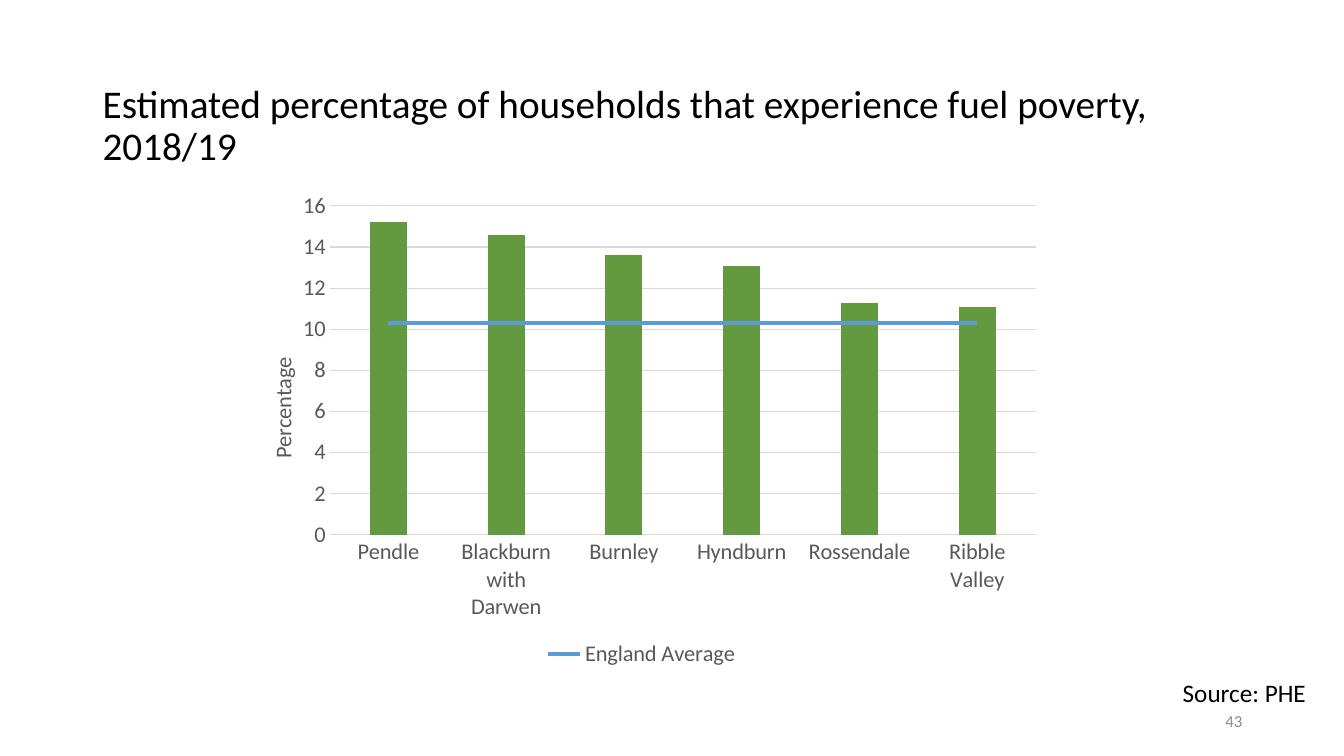
"""Build a slide charting fuel poverty by district against the England average."""
from lxml import etree
from pptx import Presentation
from pptx.chart.data import CategoryChartData
from pptx.dml.color import RGBColor
from pptx.enum import chart as ch, text
from pptx.oxml import parse_xml
from pptx.oxml.ns import nsdecls, qn
from pptx.util import Inches, Pt

BLACK = RGBColor(0x00, 0x00, 0x00)
NUMBER_GREY = RGBColor(0x8C, 0x8C, 0x8C)
LABEL_GREY = RGBColor(0x59, 0x59, 0x59)
GRID_GREY = RGBColor(0xD9, 0xD9, 0xD9)
GREEN = RGBColor(0x63, 0x9A, 0x3F)
BLUE = RGBColor(0x5B, 0x9B, 0xD5)
FONT = "Calibri"
LEFT, RIGHT = text.PP_ALIGN.LEFT, text.PP_ALIGN.RIGHT
TOP, MIDDLE = text.MSO_ANCHOR.TOP, text.MSO_ANCHOR.MIDDLE


def style_font(font, size, color):
    font.name, font.size, font.bold = FONT, Pt(size), False
    font.color.rgb = color


def set_layout(parent, index, **fractions):
    for old in parent.findall(qn("c:layout")):
        parent.remove(old)
    layout = etree.Element(qn("c:layout"))
    manual = etree.SubElement(layout, qn("c:manualLayout"))
    if "w" in fractions:
        etree.SubElement(manual, qn("c:layoutTarget"), val="inner")
    for mode in ("xMode", "yMode"):
        etree.SubElement(manual, qn(f"c:{mode}"), val="edge")
    for name, value in fractions.items():
        etree.SubElement(manual, qn(f"c:{name}"), val=str(value))
    parent.insert(index, layout)


presentation = Presentation()
presentation.slide_width = Inches(13.33)
presentation.slide_height = Inches(7.5)
slide = presentation.slides.add_slide(presentation.slide_layouts[6])

texts = [
    ("Estimated percentage of households that experience fuel poverty, 2018/19",
     (0.92, 0.72, 11.5, 1.08), 28, BLACK, LEFT, MIDDLE, 0.9),
    ("43", (9.42, 6.95, 3, 0.4), 12, NUMBER_GREY, RIGHT, MIDDLE, 1.0),
    ("Source: PHE", (11.16, 6.67, 1.89, 0.4), 18, BLACK, RIGHT, TOP, 1.0),
]
for wording, box, size, color, alignment, anchor, spacing in texts:
    frame = slide.shapes.add_textbox(*map(Inches, box)).text_frame
    frame.word_wrap = True
    frame.vertical_anchor = anchor
    paragraph = frame.paragraphs[0]
    paragraph.alignment = alignment
    paragraph.line_spacing = spacing
    run = paragraph.add_run()
    run.text = wording
    style_font(run.font, size, color)

data = CategoryChartData(number_format="0.0")
data.categories = ["Pendle", "Blackburn with Darwen", "Burnley", "Hyndburn",
                   "Rossendale", "Ribble Valley"]
data.add_series("Series 1", [15.2, 14.6, 13.6, 13.1, 11.3, 11.1])
data.add_series("England Average", [10.3] * 6)
chart = slide.shapes.add_chart(
    ch.XL_CHART_TYPE.COLUMN_CLUSTERED,
    *map(Inches, (2.29, 1.8, 8.15, 4.87)), data).chart
chart.has_title = False
style_font(chart.font, 16, LABEL_GREY)

plot = chart.plots[0]
plot.gap_width, plot.overlap = 219, -27
plot.vary_by_categories = False
districts, average = plot.series
districts.format.fill.solid()
districts.format.fill.fore_color.rgb = GREEN
average.format.line.color.rgb = BLUE
average.format.line.width = Pt(3)

category_axis, value_axis = chart.category_axis, chart.value_axis
for axis in (category_axis, value_axis):
    axis.major_tick_mark = axis.minor_tick_mark = ch.XL_TICK_MARK.NONE
    style_font(axis.tick_labels.font, 16, LABEL_GREY)
value_axis.minimum_scale, value_axis.maximum_scale = 0, 16
value_axis.major_unit = 2
value_axis.tick_labels.number_format = "0"
value_axis.tick_labels.number_format_is_linked = False
value_axis.format.line.fill.background()
for line in (category_axis.format.line, value_axis.major_gridlines.format.line):
    line.color.rgb = GRID_GREY
    line.width = Pt(0.75)

axis_title = value_axis.axis_title
run = axis_title.text_frame.paragraphs[0].add_run()
run.text = "Percentage"
style_font(run.font, 16, LABEL_GREY)
body = axis_title._element.find(".//" + qn("a:bodyPr"))
body.set("rot", "-5400000")
body.set("vert", "horz")
set_layout(axis_title._element, 1, x=0.04, y=0.35)

chart.has_legend = True
chart.legend.position = ch.XL_LEGEND_POSITION.BOTTOM
chart.legend.include_in_layout = False
style_font(chart.legend.font, 16, LABEL_GREY)
chart.legend._element.find(qn("c:legendPos")).addnext(parse_xml(
    f'<c:legendEntry {nsdecls("c")}><c:idx val="0"/><c:delete val="1"/></c:legendEntry>'))

bar_chart = plot._element
series = bar_chart.findall(qn("c:ser"))[1]
line_chart = parse_xml(
    f'<c:lineChart {nsdecls("c")}><c:grouping val="standard"/>'
    '<c:varyColors val="0"/></c:lineChart>')
bar_chart.addnext(line_chart)
line_chart.append(series)
for invert in series.findall(qn("c:invertIfNegative")):
    series.remove(invert)
series.find(qn("c:spPr")).addnext(parse_xml(
    f'<c:marker {nsdecls("c")}><c:symbol val="none"/></c:marker>'))
etree.SubElement(series, qn("c:smooth"), val="0")
etree.SubElement(line_chart, qn("c:marker"), val="1")
for axis_id in bar_chart.findall(qn("c:axId")):
    etree.SubElement(line_chart, qn("c:axId"), val=axis_id.get("val"))
set_layout(bar_chart.getparent(), 0, x=0.12, y=0.05, w=0.86, h=0.67)

presentation.save("out.pptx")
